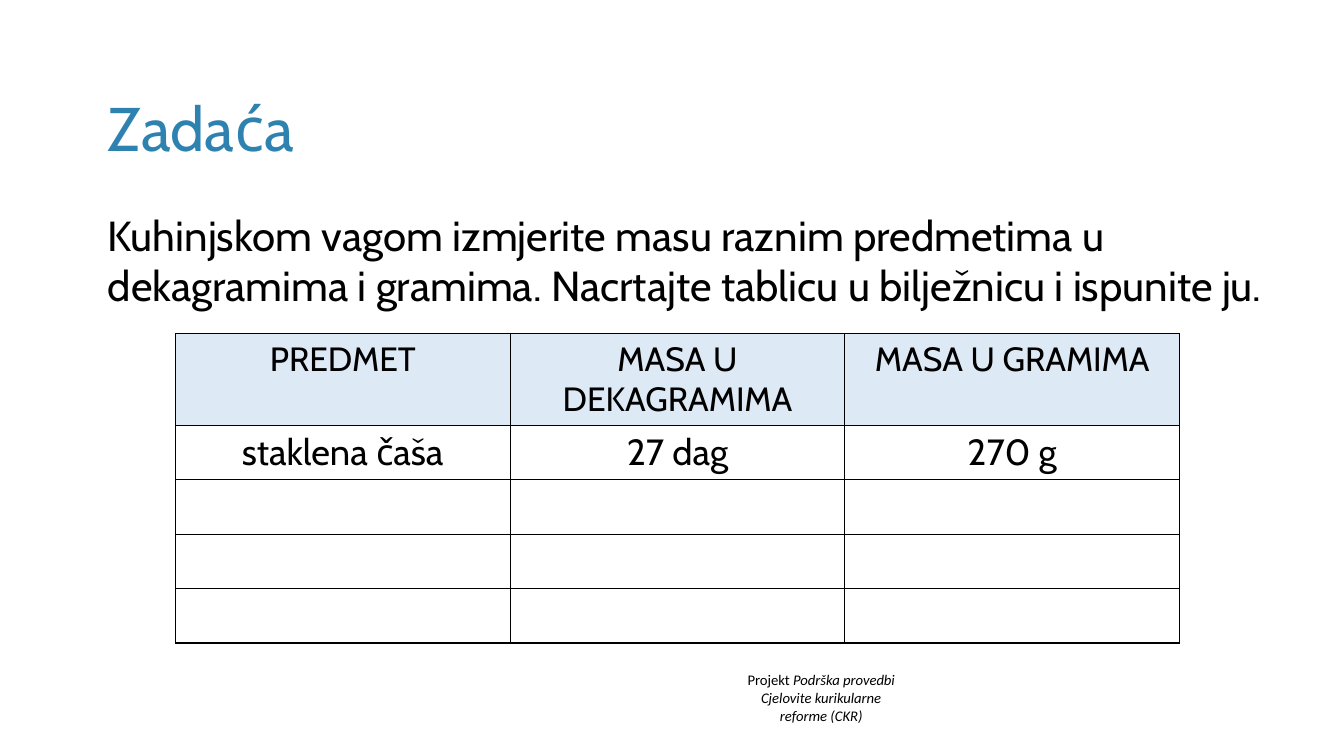
from lxml import etree
from pptx import Presentation
from pptx.dml.color import RGBColor
from pptx.enum.text import MSO_ANCHOR, PP_ALIGN
from pptx.oxml.ns import qn
from pptx.util import Pt

CENTER, LEFT = PP_ALIGN.CENTER, PP_ALIGN.LEFT
MIDDLE = MSO_ANCHOR.MIDDLE
EMU_PER_PX = 9144
TITLE_ONLY = 5
COLORS = {"title": "2E82AF", "text": "000000", "header": "DDEAF6", "border": "000000"}


def px(length):
    return length * EMU_PER_PX


class SlideBuilder:
    """Builds slide elements in one shared style."""

    def __init__(self, deck, font="Cabin"):
        self.font = font
        self.page = deck.slides.add_slide(deck.slide_layouts[TITLE_ONLY])

    def span(self, para, text, size, color="text", font=None, italic=False):
        span = para.add_run()
        span.text = text
        span.font.name = font or self.font
        span.font.size = Pt(size)
        span.font.italic = italic
        span.font.color.rgb = RGBColor.from_string(COLORS[color])

    def title(self, text, left, top, width, height):
        box = self.page.shapes.title
        box.left, box.top, box.width, box.height = map(px, (left, top, width, height))
        box.text_frame.vertical_anchor = MIDDLE
        para = box.text_frame.paragraphs[0]
        para.alignment = LEFT
        para.line_spacing = 0.9
        self.span(para, text, 44, "title")

    def text(self, lines, left, top, width, height, size, align=LEFT, font=None):
        box = self.page.shapes.add_textbox(*map(px, (left, top, width, height)))
        frame = box.text_frame
        frame.word_wrap = True
        for index, line in enumerate(lines):
            para = frame.add_paragraph() if index else frame.paragraphs[0]
            para.alignment = align
            for text, italic in line:
                self.span(para, text, size, font=font, italic=italic)

    def borders(self, cell):
        properties = cell._tc.get_or_add_tcPr()
        for position, side in enumerate(("a:lnL", "a:lnR", "a:lnT", "a:lnB")):
            line = etree.Element(qn(side), w=str(Pt(1)))
            fill = etree.SubElement(line, qn("a:solidFill"))
            etree.SubElement(fill, qn("a:srgbClr"), val=COLORS["border"])
            properties.insert(position, line)

    def table(self, rows, left, top, column_width, row_heights):
        columns = len(rows[0])
        frame = self.page.shapes.add_table(
            len(rows), columns, px(left), px(top),
            px(column_width * columns), px(sum(row_heights)))
        table = frame.table
        for column in table.columns:
            column.width = px(column_width)
        for row_index, texts in enumerate(rows):
            table.rows[row_index].height = px(row_heights[row_index])
            for column_index, text in enumerate(texts):
                cell = table.cell(row_index, column_index)
                if row_index == 0:
                    cell.fill.solid()
                    cell.fill.fore_color.rgb = RGBColor.from_string(COLORS["header"])
                else:
                    cell.fill.background()
                self.borders(cell)
                if text:
                    para = cell.text_frame.paragraphs[0]
                    para.alignment = CENTER
                    self.span(para, text, 26 if row_index else 24)


def main():
    deck = Presentation()
    deck.slide_width, deck.slide_height = px(1333), px(750)
    builder = SlideBuilder(deck)
    builder.text(
        [[("Projekt ", False), ("Podrška provedbi", True)],
         [("Cjelovite kurikularne", True)],
         [("reforme (CKR)", True)]],
        699, 661, 231, 63, 10.5, CENTER, "Calibri")
    builder.title("Zadaća", 97, 58, 1150, 145)
    builder.text(
        [[("Kuhinjskom vagom izmjerite masu raznim predmetima u dekagramima i gramima. "
           "Nacrtajte tablicu u bilježnicu i ispunite ju.", False)]],
        97, 203, 1217, 144, 30)
    rows = [
        ["PREDMET", "MASA U DEKAGRAMIMA", "MASA U GRAMIMA"],
        ["staklena čaša", "27 dag", "270 g"],
    ] + [[""] * 3] * 3
    builder.table(rows, 174, 331, 332, [91] + [54] * 4)
    deck.save("out.pptx")


if __name__ == "__main__":
    main()
